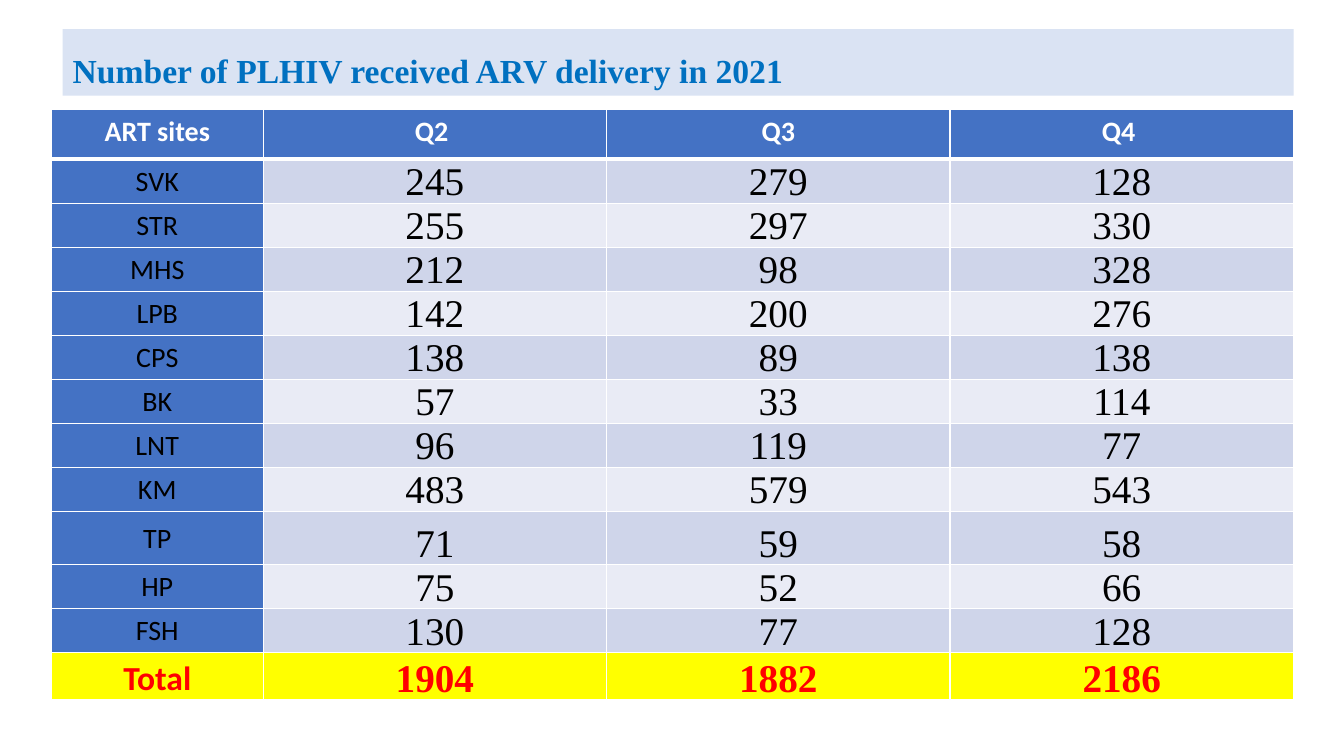
import pptx
import pptx.dml.color
import pptx.enum.text
import pptx.oxml
import pptx.oxml.ns
import pptx.util

Inches = pptx.util.Inches
ALIGN = pptx.enum.text.PP_ALIGN
ANCHOR = pptx.enum.text.MSO_ANCHOR

COLORS = {
    "band": "DAE3F3",
    "title": "0070C0",
    "header": "4472C4",
    "odd": "CFD5EA",
    "even": "E9EBF5",
    "total": "FFFF00",
    "red": "FF0000",
    "black": "000000",
    "white": "FFFFFF",
}
SANS = "Calibri"
SERIF = "Times New Roman"

HEADER = ["ART sites", "Q2 ", "Q3", "Q4 "]
SITES = [
    ("SVK", 245, 279, 128),
    ("STR", 255, 297, 330),
    ("MHS", 212, 98, 328),
    ("LPB", 142, 200, 276),
    ("CPS", 138, 89, 138),
    ("BK", 57, 33, 114),
    ("LNT", 96, 119, 77),
    ("KM", 483, 579, 543),
    ("TP", 71, 59, 58),
    ("HP", 75, 52, 66),
    ("FSH", 130, 77, 128),
]
TOTAL = ["Total", 1904, 1882, 2186]

TABLE_WIDTH = 12.32
SITE_WIDTH = 2.1
SITES_HEIGHT = 4.9
TALL_ROW = 0.53


def rgb(name):
    return pptx.dml.color.RGBColor.from_string(COLORS[name])


def fill_with(obj, color):
    obj.fill.solid()
    obj.fill.fore_color.rgb = rgb(color)


def write(tf, text, size=20, font=SANS, color="black", bold=False,
          align=ALIGN.CENTER, spacing=None):
    p = tf.paragraphs[0]
    p.alignment = align
    p.line_spacing = spacing
    r = p.add_run()
    r.text = str(text)
    r.font.size = pptx.util.Pt(size)
    r.font.name = font
    r.font.bold = bold
    r.font.color.rgb = rgb(color)


def add_borders(cell, bottom=1):
    tcPr = cell._tc.get_or_add_tcPr()
    for side, width in (("L", 1), ("R", 1), ("T", 1), ("B", bottom)):
        tcPr.append(pptx.oxml.parse_xml(
            f'<a:ln{side} {pptx.oxml.ns.nsdecls("a")} w="{pptx.util.Pt(width)}">'
            f'<a:solidFill><a:srgbClr val="{COLORS["white"]}"/></a:solidFill>'
            f'</a:ln{side}>'))


def add_cell(cell, text, fill, anchor=ANCHOR.TOP, side=0.07, top=0, bottom=1, **fmt):
    add_borders(cell, bottom)
    fill_with(cell, fill)
    cell.vertical_anchor = anchor
    cell.margin_left = cell.margin_right = Inches(side)
    cell.margin_top = Inches(top)
    cell.margin_bottom = 0
    write(cell.text_frame, text, **fmt)


def add_number(cell, value, fill, **fmt):
    add_cell(cell, value, fill, anchor=ANCHOR.BOTTOM, side=0.01, top=0.01,
             size=28, font=SERIF, spacing=0.88, **fmt)


def add_title(s, text):
    sp = s.shapes.title
    sp.left, sp.top = Inches(0.62), Inches(0.29)
    sp.width, sp.height = Inches(12.21), Inches(0.66)
    fill_with(sp, "band")
    tf = sp.text_frame
    tf.word_wrap = True
    tf.auto_size = pptx.enum.text.MSO_AUTO_SIZE.NONE
    tf.vertical_anchor = ANCHOR.BOTTOM
    write(tf, text, size=24, font=SERIF, color="title", bold=True,
          align=ALIGN.LEFT)


def add_delivery_table(s):
    quarters = len(HEADER) - 1
    widths = [SITE_WIDTH] + [(TABLE_WIDTH - SITE_WIDTH) / quarters] * quarters
    site_row = (SITES_HEIGHT - TALL_ROW) / (len(SITES) - 1)
    heights = [0.49] + [TALL_ROW if site[0] == "TP" else site_row for site in SITES] + [0.46]
    table = s.shapes.add_table(len(heights), len(widths), Inches(0.51), Inches(1.09),
                               Inches(sum(widths)), Inches(sum(heights))).table
    table.horz_banding = False
    for col, width in zip(table.columns, widths):
        col.width = Inches(width)
    for row, height in zip(table.rows, heights):
        row.height = Inches(height)

    for c, label in enumerate(HEADER):
        add_cell(table.cell(0, c), label, "header", bottom=3,
                 color="white", bold=True, spacing=1.15)
    for i, (site, *counts) in enumerate(SITES, 1):
        add_cell(table.cell(i, 0), site, "header", anchor=ANCHOR.MIDDLE,
                 side=0.01, top=0.01)
        for c, count in enumerate(counts, 1):
            add_number(table.cell(i, c), count, "odd" if i % 2 else "even")
    last = len(heights) - 1
    add_cell(table.cell(last, 0), TOTAL[0], "total", size=24, color="red",
             bold=True, spacing=1.15)
    for c, total in enumerate(TOTAL[1:], 1):
        add_number(table.cell(last, c), total, "total", color="red", bold=True)


def main():
    prs = pptx.Presentation()
    prs.slide_width, prs.slide_height = Inches(13.33), Inches(7.5)
    s = prs.slides.add_slide(prs.slide_layouts[5])
    add_delivery_table(s)
    add_title(s, "Number of PLHIV received ARV delivery in 2021")
    prs.save("out.pptx")


if __name__ == "__main__":
    main()
